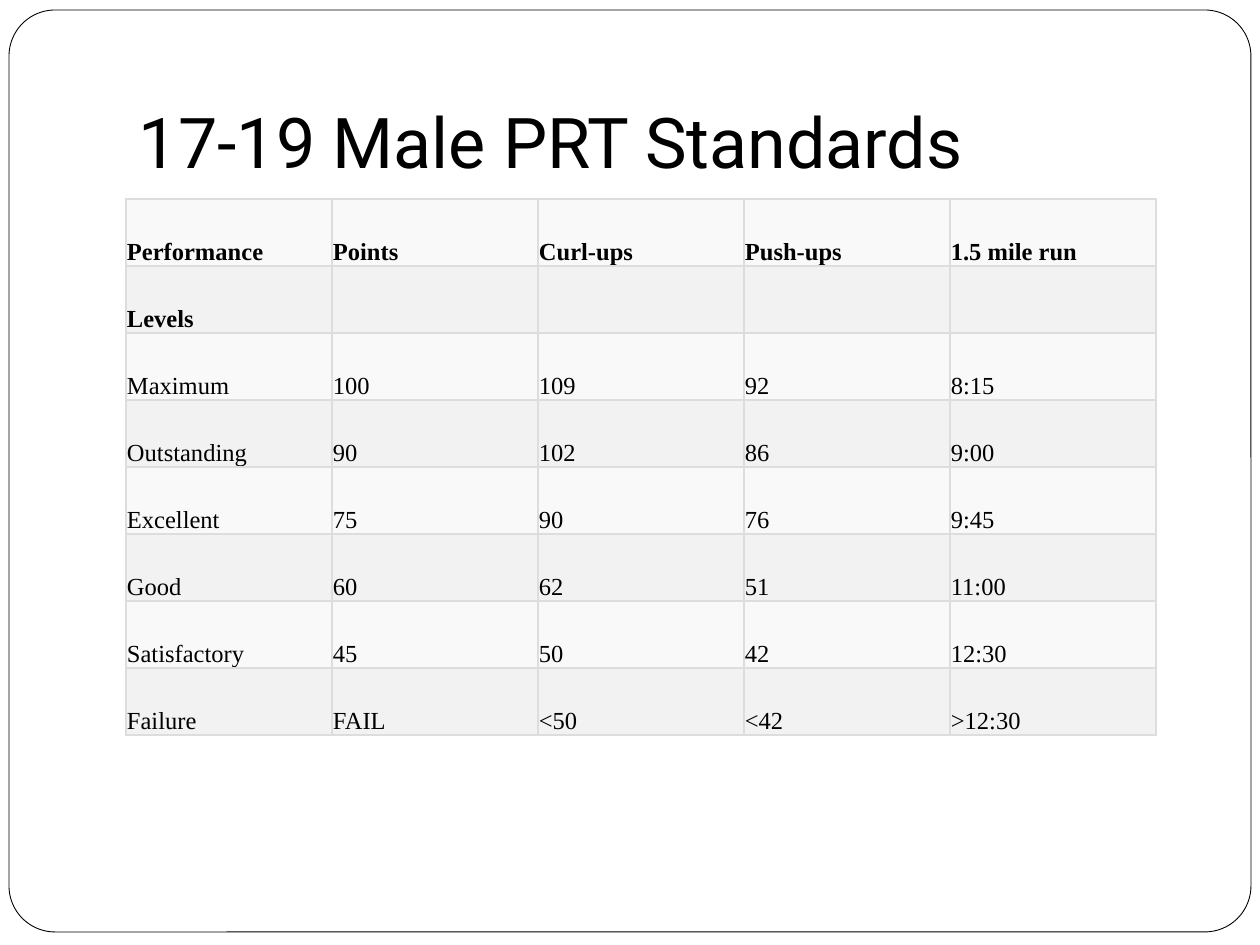
from lxml.etree import SubElement
from pptx import Presentation
from pptx.dml.color import RGBColor
from pptx.enum.shapes import MSO_SHAPE as Shape
from pptx.enum.text import MSO_ANCHOR as Anchor
from pptx.oxml.ns import qn
from pptx.util import Pt

TITLE = "17-19 Male PRT Standards"
STANDARDS = [
    ("Performance", "Points", "Curl-ups", "Push-ups", "1.5 mile run"),
    ("Levels", "", "", "", ""),
    ("Maximum", "100", "109", "92", "8:15"),
    ("Outstanding", "90", "102", "86", "9:00"),
    ("Excellent", "75", "90", "76", "9:45"),
    ("Good", "60", "62", "51", "11:00"),
    ("Satisfactory", "45", "50", "42", "12:30"),
    ("Failure", "FAIL", "<50", "<42", ">12:30"),
]
HEADER_ROWS = 2

BLACK = RGBColor(0x00, 0x00, 0x00)
WHITE = RGBColor(0xFF, 0xFF, 0xFF)
BORDER = RGBColor(0xDD, 0xDD, 0xDD)
BANDS = (RGBColor(0xF9, 0xF9, 0xF9), RGBColor(0xF2, 0xF2, 0xF2))

COLUMN_WIDTH, ROW_HEIGHT = 206, 67


def px(*lengths):
    return [round(length * 914400 / 126) for length in lengths]


def style_text(text_frame, font_name, size, bold=False):
    for run in text_frame.paragraphs[0].runs:
        run.font.name = font_name
        run.font.size = Pt(size)
        run.font.bold = bold
        run.font.color.rgb = BLACK


def set_borders(cell):
    """Draw all four cell borders; must run before the cell gets its fill."""
    properties = cell._tc.get_or_add_tcPr()
    for side in ("a:lnL", "a:lnR", "a:lnT", "a:lnB"):
        line = SubElement(properties, qn(side), w=str(Pt(1)))
        fill = SubElement(line, qn("a:solidFill"))
        SubElement(fill, qn("a:srgbClr"), val=str(BORDER))


def add_frame(slide):
    frame = slide.shapes.add_shape(Shape.ROUNDED_RECTANGLE, *px(9, 10, 1242, 922))
    frame.adjustments[0] = 0.05
    frame.shadow.inherit = False
    frame.fill.solid()
    frame.fill.fore_color.rgb = WHITE
    frame.line.color.rgb = BLACK
    frame.line.width = Pt(0.5)


def add_title(slide):
    title = slide.shapes.add_textbox(*px(126, 38, 1071, 157)).text_frame
    title.word_wrap = True
    title.vertical_anchor = Anchor.BOTTOM
    title.margin_left, title.margin_top, title.margin_right, title.margin_bottom = px(13, 6, 13, 13)
    title.text = TITLE
    style_text(title, "Roboto", 40)


def add_standards(slide):
    row_count, column_count = len(STANDARDS), len(STANDARDS[0])
    table = slide.shapes.add_table(
        row_count, column_count,
        *px(126, 199, column_count * COLUMN_WIDTH, row_count * ROW_HEIGHT)).table
    for row_index, values in enumerate(STANDARDS):
        for column_index, value in enumerate(values):
            cell = table.cell(row_index, column_index)
            cell.margin_left, cell.margin_top, cell.margin_right, cell.margin_bottom = px(1, 1, 1, 0)
            cell.vertical_anchor = Anchor.BOTTOM
            set_borders(cell)
            cell.fill.solid()
            cell.fill.fore_color.rgb = BANDS[row_index % 2]
            if value:
                cell.text_frame.text = value
                style_text(cell.text_frame, "Times New Roman", 14, row_index < HEADER_ROWS)


def main():
    deck = Presentation()
    deck.slide_width, deck.slide_height = px(1260, 945)
    slide = deck.slides.add_slide(deck.slide_layouts[6])
    add_frame(slide)
    add_title(slide)
    add_standards(slide)
    deck.save("out.pptx")


if __name__ == "__main__":
    main()
